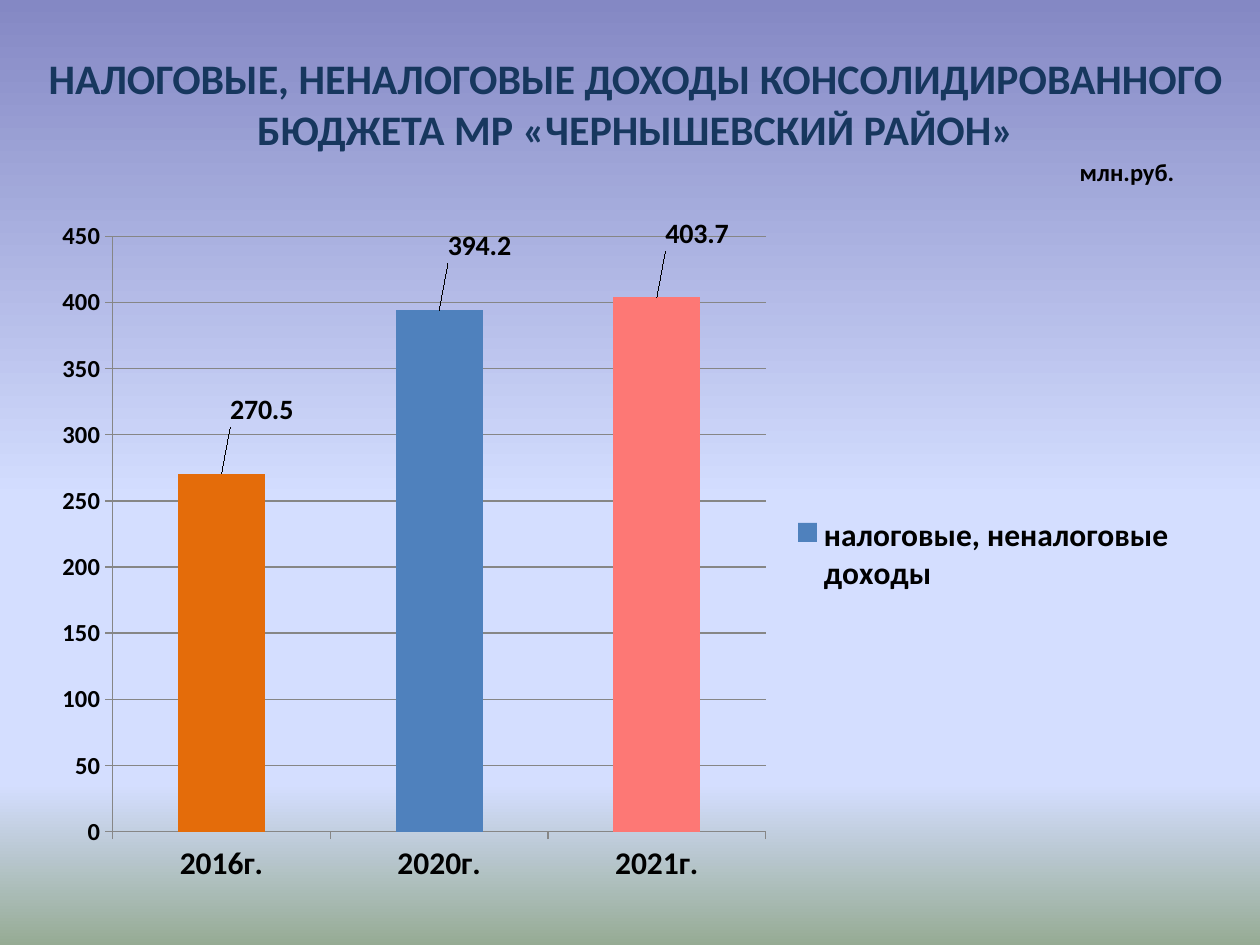
"""Build a slide with a column chart of district budget revenues."""
from pptx import Presentation
from pptx.chart.data import CategoryChartData
from pptx.dml.color import RGBColor
from pptx.enum.chart import XL_CHART_TYPE, XL_LABEL_POSITION, XL_LEGEND_POSITION, XL_TICK_MARK
from pptx.enum.text import MSO_ANCHOR, PP_ALIGN
from pptx.oxml import parse_xml
from pptx.oxml.ns import nsdecls, qn
from pptx.util import Inches, Pt

COLUMN = XL_CHART_TYPE.COLUMN_CLUSTERED
ABOVE = XL_LABEL_POSITION.OUTSIDE_END
RIGHT = XL_LEGEND_POSITION.RIGHT
OUT = XL_TICK_MARK.OUTSIDE
MIDDLE = MSO_ANCHOR.MIDDLE
CENTER = PP_ALIGN.CENTER

TITLE = "НАЛОГОВЫЕ, НЕНАЛОГОВЫЕ ДОХОДЫ КОНСОЛИДИРОВАННОГО БЮДЖЕТА МР «ЧЕРНЫШЕВСКИЙ РАЙОН»"
UNIT = "млн.руб."
SERIES = "налоговые, неналоговые доходы"
YEARS = ["2016г.", "2020г.", "2021г."]
VALUES = [270.5, 394.2, 403.7]

THEME = {
    "font": "Calibri",
    "title": "17375E",
    "text": "000000",
    "line": "868686",
    "bar": "4F81BD",
    "points": {0: "E46C0A", 2: "FD7875"},
    "back": [(0, "8488C4"), (53, "D4DEFF"), (83, "D4DEFF"), (100, "96AB94")],
    "size": {"title": 24, "large": 18, "label": 16, "small": 14},
}
SIZE = THEME["size"]


def style(font, size, color=THEME["text"]):
    font.name = THEME["font"]
    font.size = Pt(size)
    font.bold = True
    font.color.rgb = RGBColor.from_string(color)


def add_text(slide, text, *, box, size, color=THEME["text"]):
    frame = slide.shapes.add_textbox(*map(Inches, box)).text_frame
    frame.word_wrap = True
    frame.vertical_anchor = MIDDLE
    para = frame.paragraphs[0]
    para.alignment = CENTER
    run = para.add_run()
    run.text = text
    style(run.font, size, color)


def paint_back(slide):
    fill = slide.background.fill
    fill.gradient()
    fill.gradient_angle = 270
    stops = slide.element.find(".//" + qn("a:gsLst"))
    for stop in list(stops):
        stops.remove(stop)
    for place, color in THEME["back"]:
        stops.append(parse_xml(
            f'<a:gs {nsdecls("a")} pos="{place * 1000}"><a:srgbClr val="{color}"/></a:gs>'))


def set_layout(node, index, **parts):
    for old in node.findall(qn("c:layout")):
        node.remove(old)
    body = "".join(f'<c:{name} val="{value}"/>' for name, value in parts.items())
    node.insert(index, parse_xml(
        f'<c:layout {nsdecls("c")}><c:manualLayout>{body}</c:manualLayout></c:layout>'))


def add_columns(slide, box):
    data = CategoryChartData()
    data.categories = YEARS
    data.add_series(SERIES, VALUES)
    chart = slide.shapes.add_chart(COLUMN, *map(Inches, box), data).chart
    chart.has_title = False
    style(chart.font, SIZE["small"])
    plot = chart.plots[0]
    plot.vary_by_categories = False
    plot.gap_width = 150

    line = RGBColor.from_string(THEME["line"])
    for axis, size in ((chart.category_axis, "large"), (chart.value_axis, "small")):
        style(axis.tick_labels.font, SIZE[size])
        axis.major_tick_mark = OUT
        axis.format.line.color.rgb = line
    scale = chart.value_axis
    scale.minimum_scale, scale.maximum_scale, scale.major_unit = 0, 450, 50
    scale.has_major_gridlines = True
    scale.major_gridlines.format.line.color.rgb = line

    bars = plot.series[0]
    bars.format.fill.solid()
    bars.format.fill.fore_color.rgb = RGBColor.from_string(THEME["bar"])
    for index, color in THEME["points"].items():
        fill = bars.points[index].format.fill
        fill.solid()
        fill.fore_color.rgb = RGBColor.from_string(color)
    bars.data_labels.show_value = True
    style(bars.data_labels.font, SIZE["label"])
    for index in range(len(VALUES)):
        label = bars.points[index].data_label
        style(label.font, SIZE["label"])
        label.position = ABOVE

    chart.has_legend = True
    legend = chart.legend
    legend.position = RIGHT
    legend.include_in_layout = False
    style(legend.font, SIZE["large"])

    root = chart.element
    set_layout(root.find(".//" + qn("c:plotArea")), 0, layoutTarget="inner",
               xMode="edge", yMode="edge", x=0.064, y=0.043, w=0.567, h=0.864)
    set_layout(root.find(".//" + qn("c:legend")), 1,
               xMode="edge", yMode="edge", x=0.65, y=0.44, w=0.34, h=0.13)
    for node in root.iter(qn("c:dLbl")):
        set_layout(node, 1, x=0.035, y=-0.06)


def main():
    deck = Presentation()
    deck.slide_width, deck.slide_height = Inches(10), Inches(7.5)
    slide = deck.slides.add_slide(deck.slide_layouts[6])
    paint_back(slide)
    add_text(slide, TITLE, box=(0.16, 0.47, 9.77, 0.7), size=SIZE["title"], color=THEME["title"])
    add_columns(slide, (0.31, 1.64, 9.14, 5.47))
    add_text(slide, UNIT, box=(8.28, 1.25, 1.33, 0.23), size=SIZE["small"])
    deck.save("out.pptx")


if __name__ == "__main__":
    main()
